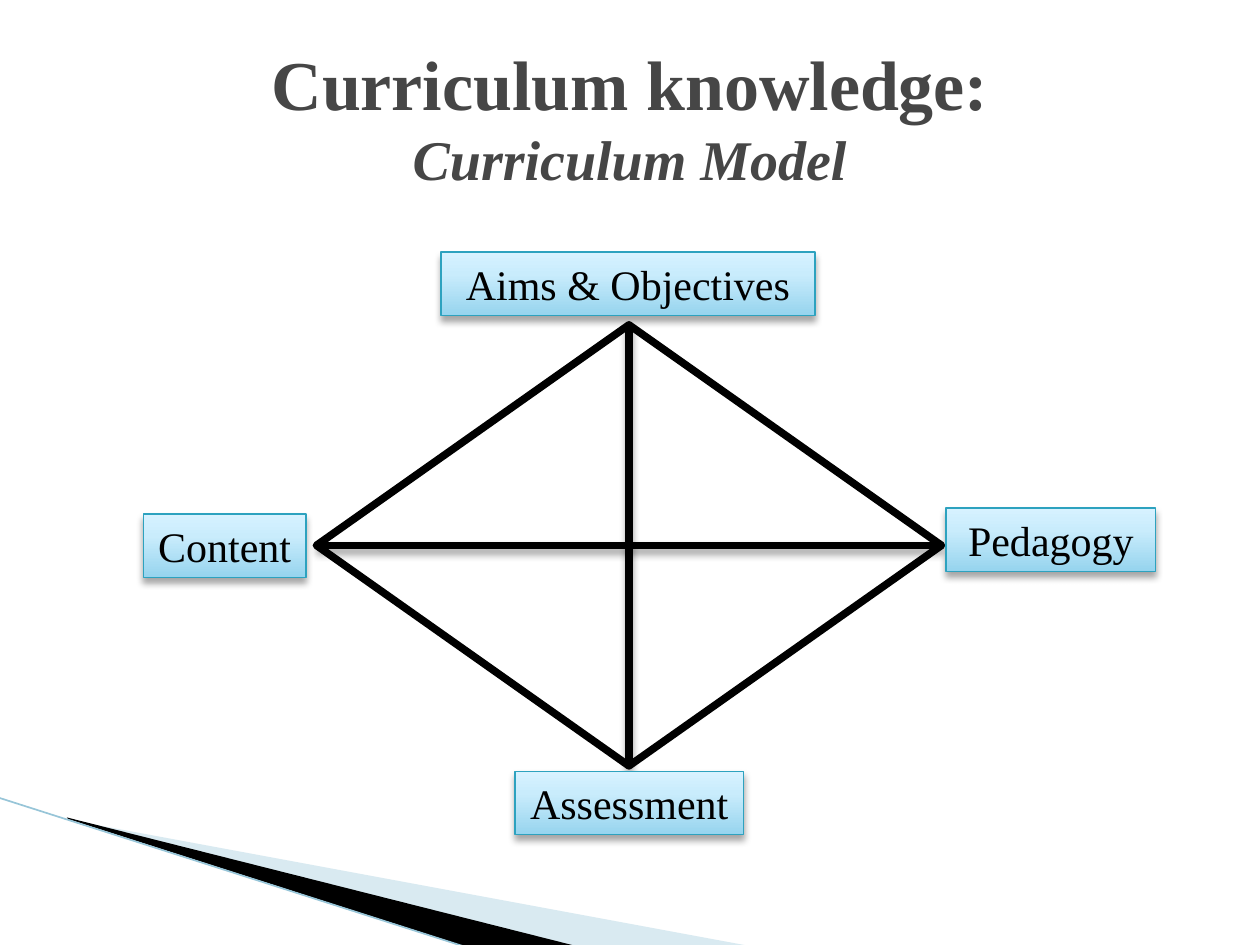
"""Build the curriculum model slide."""
from copy import deepcopy
from dataclasses import dataclass

from lxml import etree
from pptx import Presentation
from pptx.dml.color import RGBColor
from pptx.enum.shapes import MSO_CONNECTOR, MSO_SHAPE
from pptx.enum.text import MSO_ANCHOR, MSO_AUTO_SIZE, PP_ALIGN
from pptx.oxml.ns import qn
from pptx.util import Cm, Pt

STRAIGHT = MSO_CONNECTOR.STRAIGHT
RECTANGLE = MSO_SHAPE.RECTANGLE
DECISION = MSO_SHAPE.FLOWCHART_DECISION
MIDDLE = MSO_ANCHOR.MIDDLE
CENTER = PP_ALIGN.CENTER
FIT_SHAPE = MSO_AUTO_SIZE.SHAPE_TO_FIT_TEXT
TITLE_ONLY = 5
TOP, LEFT, BOTTOM, RIGHT = range(4)


@dataclass(frozen=True)
class Theme:
    """Colours, font and sizes of the slide."""

    font: str = "Times New Roman"
    title_size: float = 40
    subtitle_size: float = 32
    label_size: float = 24
    title: str = "464646"
    ink: str = "000000"
    paper: str = "FFFFFF"
    label_line: str = "2DA2BF"
    label_stops: tuple = ((0, "96D4EE"), (0.65, "C9ECFC"), (1, "D7F2FF"))
    swoosh: str = "A0CBDC"
    swoosh_line: str = "97C5D8"
    thick: float = 4.33
    thin: float = 0.75
    hairline: float = 0.95


class SlideBuilder:
    """Draw themed elements on one slide."""

    def __init__(self, slide, theme):
        self.slide = slide
        self.theme = theme

    def format_run(self, run, size, color, bold=False, italic=False):
        font = run.font
        font.name = self.theme.font
        font.size = Pt(size)
        font.bold = bold
        font.italic = italic
        font.color.rgb = RGBColor.from_string(color)

    def format_line(self, line, color, width):
        line.color.rgb = RGBColor.from_string(color)
        line.width = Pt(width)

    def set_effects(self, shape, shadow):
        properties = shape._element.spPr
        for existing in properties.findall(qn("a:effectLst")):
            properties.remove(existing)
        effects = etree.SubElement(properties, qn("a:effectLst"))
        if shadow:
            outer = etree.SubElement(
                effects, qn("a:outerShdw"), blurRad=str(Pt(4)), dist=str(Pt(3)),
                dir="5400000", rotWithShape="0")
            color = etree.SubElement(outer, qn("a:srgbClr"), val=self.theme.ink)
            etree.SubElement(color, qn("a:alpha"), val="35000")

    def add_title(self, title, subtitle, left, top, width, height):
        shape = self.slide.shapes.title
        shape.left, shape.top, shape.width, shape.height = map(
            Cm, (left, top, width, height))
        frame = shape.text_frame
        frame.vertical_anchor = MIDDLE
        paragraph = frame.paragraphs[0]
        paragraph.text = f"{title}\n{subtitle}"
        paragraph.alignment = CENTER
        heading, detail = paragraph.runs
        theme = self.theme
        self.format_run(heading, theme.title_size, theme.title, bold=True)
        self.format_run(detail, theme.subtitle_size, theme.title, bold=True, italic=True)

    def add_swoosh(self, points, color, opacity=100):
        start, *others = [(Cm(x), Cm(y)) for x, y in points]
        builder = self.slide.shapes.build_freeform(*start)
        builder.add_line_segments(others)
        shape = builder.convert_to_shape()
        shape.shadow.inherit = False
        shape.fill.solid()
        shape.fill.fore_color.rgb = RGBColor.from_string(color)
        shape.line.fill.background()
        if opacity < 100:
            fill_color = shape._element.spPr.find(qn("a:solidFill"))[0]
            etree.SubElement(fill_color, qn("a:alpha"), val=str(opacity * 1000))

    def add_line(self, shapes, ends, color, width, shadow=False):
        line = shapes.add_connector(STRAIGHT, *map(Cm, ends))
        self.format_line(line.line, color, width)
        self.set_effects(line, shadow)
        return line

    def add_diamond(self, left, top, width, height):
        theme = self.theme
        shapes = self.slide.shapes.add_group_shape().shapes
        diamond = shapes.add_shape(DECISION, *map(Cm, (left, top, width, height)))
        diamond.shadow.inherit = False
        diamond.fill.solid()
        diamond.fill.fore_color.rgb = RGBColor.from_string(theme.paper)
        self.format_line(diamond.line, theme.ink, theme.thick)
        center, middle = left + width / 2, top + height / 2
        diagonals = (
            ((left, middle, left + width, middle), LEFT, RIGHT),
            ((center, top, center, top + height), TOP, BOTTOM),
        )
        for ends, begin, end in diagonals:
            line = self.add_line(shapes, ends, theme.ink, theme.thick, shadow=True)
            line.begin_connect(diamond, begin)
            line.end_connect(diamond, end)

    def add_label(self, text, left, top, width, wrap):
        theme = self.theme
        shape = self.slide.shapes.add_shape(
            RECTANGLE, Cm(left), Cm(top), Cm(width), Cm(1.28))
        shape.fill.gradient()
        shape.fill.gradient_angle = 90
        stop_list = shape._element.spPr.find(qn("a:gradFill")).find(qn("a:gsLst"))
        stop_list.append(deepcopy(stop_list[-1]))
        for stop, (position, color) in zip(shape.fill.gradient_stops, theme.label_stops):
            stop.position = position
            stop.color.rgb = RGBColor.from_string(color)
        self.format_line(shape.line, theme.label_line, theme.thin)
        self.set_effects(shape, shadow=True)
        frame = shape.text_frame
        frame.text = text
        frame.word_wrap = wrap
        frame.auto_size = FIT_SHAPE
        paragraph = frame.paragraphs[0]
        paragraph.alignment = CENTER
        self.format_run(paragraph.runs[0], theme.label_size, theme.ink)


def main():
    presentation = Presentation()
    presentation.slide_width, presentation.slide_height = Cm(25.4), Cm(19.05)
    slide = presentation.slides.add_slide(presentation.slide_layouts[TITLE_ONLY])
    theme = Theme()
    builder = SlideBuilder(slide, theme)

    builder.add_swoosh(
        [(1.4, 16.53), (15.11, 19.07), (11.58, 19.07), (1.4, 16.51)], theme.swoosh, 40)
    builder.add_swoosh(
        [(1.35, 16.48), (11.61, 19.07), (9.45, 19.1), (1.37, 16.51)], theme.ink)
    builder.add_line(
        slide.shapes, (-0.03, 16.08, 9.42, 19.1), theme.swoosh_line, theme.hairline)
    builder.add_title("Curriculum knowledge:", "Curriculum Model", 1.27, 0.76, 22.86, 3.18)
    builder.add_diamond(6.38, 6.55, 12.6, 8.89)

    labels = (
        ("Aims & Objectives", 8.89, 5.08, 7.54, True),
        ("Assessment", 10.38, 15.55, 4.61, False),
        ("Pedagogy", 19.07, 10.24, 4.23, True),
        ("Content", 2.89, 10.36, 3.28, False),
    )
    for label in labels:
        builder.add_label(*label)
    presentation.save("out.pptx")


if __name__ == "__main__":
    main()
